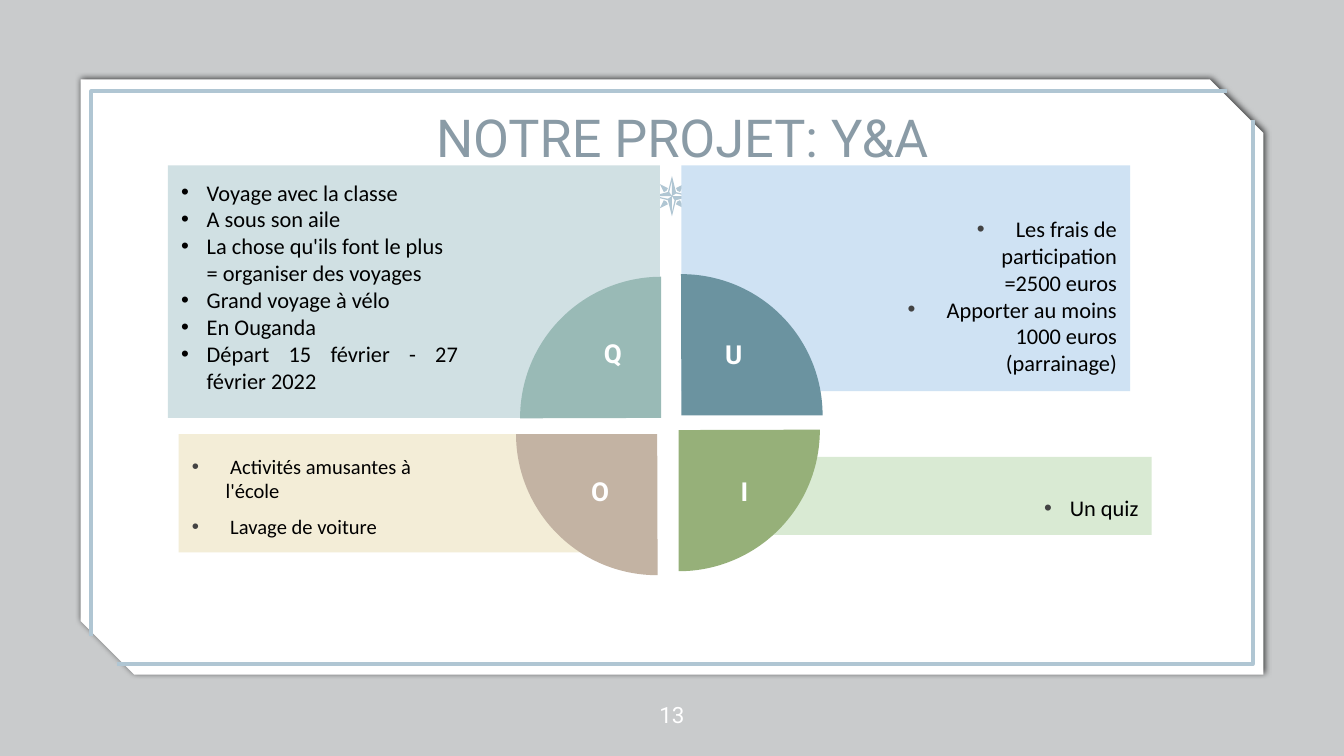
"""Build the project slide on a grid of 100 columns by 56.25 rows."""
from lxml import etree
from pptx import Presentation
from pptx import util as u
from pptx.dml.color import RGBColor
from pptx.enum import shapes, text
from pptx.oxml import ns

COLS, ROWS = 100, 56.25
CELL = u.Inches(0.1)
HUE = {
    "ink": "000000", "white": "FFFFFF", "veil": "040E11", "line": "B0C6D3",
    "title": "8A9BA6", "dot": "434343",
    "mist": "D0E0E3", "sky": "CFE2F3", "sand": "F3EDD7", "mint": "D9EAD3",
    "teal": "99BAB6", "blue": "6B93A0", "green": "96B079", "taupe": "C3B3A3",
}
KIND = shapes.MSO_SHAPE
SIDE = text.PP_ALIGN
EDGE = text.MSO_ANCHOR


def rgb(name):
    """Return the named colour."""
    return RGBColor.from_string(HUE[name])


def grid(*vals):
    """Turn grid cells into slide lengths."""
    return [u.Emu(round(v * CELL)) for v in vals]


def node(up, tag, **atts):
    """Add an XML child in the drawing namespace."""
    kid = etree.SubElement(up, ns.qn("a:" + tag))
    for key, val in atts.items():
        kid.set(key, str(val))
    return kid


def paint(item, hue):
    """Give a shape a flat fill and no line or shadow."""
    item.shadow.inherit = False
    item.fill.solid()
    item.fill.fore_color.rgb = rgb(hue)
    item.line.fill.background()
    return item


def shape(page, kind, box, hue, adj=(), turn=0):
    """Add a flat preset shape."""
    item = paint(page.shapes.add_shape(kind, *grid(*box)), hue)
    for i, val in enumerate(adj):
        item.adjustments[i] = val
    item.rotation = turn
    return item


def path(page, loops, close):
    """Add an outline made of one or more point loops."""
    loops = [[grid(*p) for p in loop] for loop in loops]
    pen = page.shapes.build_freeform(*loops[0][0])
    for i, (start, *rest) in enumerate(loops):
        if i:
            pen.move_to(*start)
        pen.add_line_segments(rest, close=close)
    return pen.convert_to_shape()


def frame(item, edge, pads, wrap=True):
    """Set anchor, wrap and insets (left, top, right, bottom)."""
    body = item.text_frame
    body.word_wrap = wrap
    body.vertical_anchor = edge
    (body.margin_left, body.margin_top,
     body.margin_right, body.margin_bottom) = grid(*pads)
    return body


def write(para, words, size, hue, font, side, bold=False):
    """Add one run to a paragraph."""
    para.alignment = side
    run = para.add_run()
    run.text = words
    run.font.size, run.font.name, run.font.bold = u.Pt(size), font, bold
    run.font.color.rgb = rgb(hue)


def label(page, box, words, size, hue, edge, pads, bold=False, wrap=True):
    """Add a centred line of text."""
    item = page.shapes.add_textbox(*grid(*box))
    body = frame(item, edge, pads, wrap)
    write(body.paragraphs[0], words, size, hue, "Roboto", SIDE.CENTER, bold)


def bullet(para, hue, hang):
    """Give a paragraph a hanging bullet."""
    props = para._p.get_or_add_pPr()
    step = grid(hang)[0]
    props.set("marL", str(step))
    props.set("indent", str(-step))
    node(node(props, "buClr"), "srgbClr", val=HUE[hue])
    node(props, "buFont", typeface="Arial")
    node(props, "buChar", char="•")


def panel(page, box, hue, lines, edge, pads, dot, hang, side, size=12, gap=0):
    """Add a filled panel; each line is (words, alignment, bulleted)."""
    body = frame(shape(page, KIND.RECTANGLE, box, hue), edge, pads)
    for i, line in enumerate(lines):
        words, own, mark = line if isinstance(line, tuple) else (line, side, True)
        para = body.add_paragraph() if i else body.paragraphs[0]
        if mark:
            bullet(para, dot, hang)
        para.space_before = u.Pt(gap if i else 0)
        write(para, words, size, "ink", "Calibri", own)


def back(page):
    """Draw the veil, the paper card and its border."""
    veil = shape(page, KIND.RECTANGLE, (0, 0, COLS, ROWS), "veil")
    node(veil.fill._xPr.find(".//" + ns.qn("a:srgbClr")), "alpha", val=21000)
    card = shape(page, KIND.SNIP_2_DIAG_RECTANGLE, (6, 5.9, 88, 44.3),
                 "white", (0, 0.09))
    glow = node(card._element.spPr.find(ns.qn("a:effectLst")), "outerShdw",
                blurRad=u.Pt(3.4), dist=u.Pt(0.8), dir=0,
                algn="ctr", rotWithShape=0)
    node(node(glow, "srgbClr", val=HUE["ink"]), "alpha", val=68000)
    for loop in ([(6.8, 47.3), (6.8, 6.8), (91.3, 6.8)],
                 [(93.2, 8.9), (93.2, 49.4), (8.7, 49.4)]):
        rim = path(page, [loop], False)
        rim.shadow.inherit = False
        rim.fill.background()
        rim.line.color.rgb = rgb("line")
        rim.line.width = u.Pt(2.25)


def star(page, x, y):
    """Draw a compass rose around a centre."""
    def spot(pts, h=1, v=1):
        return [(x + h * a, y + v * b) for a, b in pts]

    ray = [(-0.9, -0.9), (-0.6, -0.3), (-0.4, -0.4), (-0.3, -0.6)]
    for h in (-1, 1):
        for v in (-1, 1):
            paint(path(page, [spot(ray, h, v)], True), "line")
    rose = [
        [(0, -1.2), (0, 0), (-0.2, -0.3)],
        [(0.3, -0.2), (1.2, 0), (0, 0), (0.2, 0.3), (0, 1.2), (0, 0),
         (-0.3, 0.2), (-1.2, 0), (0, 0)],
        [(0, -1.5), (-0.3, -0.3), (-1.5, 0), (-0.3, 0.3),
         (0, 1.5), (0.3, 0.3), (1.5, 0), (0.3, -0.3)],
    ]
    paint(path(page, [spot(loop) for loop in rose], True), "line")


def wheel(page):
    """Draw the four quarter pies and their letters."""
    for i, (x, y, hue) in enumerate([(38.7, 20.6, "teal"), (40.2, 20.4, "blue"),
                                     (40, 21.5, "green"), (38.4, 21.8, "taupe")]):
        shape(page, KIND.PIE, (x, y, 21, 21), hue, (107.89, 162), 90 * i)
    for words, box in [("Q", (43.7, 24.6, 3.8, 4.3)), ("U", (52.5, 24.7, 4.2, 3.5)),
                       ("I", (54.6, 34.9, 1.6, 3.9)), ("O", (43.1, 34.9, 3.1, 3.5))]:
        label(page, box, words, 14, "white", EDGE.TOP, (0, 0.5, 0, 0.5), True, False)


def main():
    """Build and save the slide."""
    deck = Presentation()
    deck.slide_width, deck.slide_height = grid(COLS, ROWS)
    page = deck.slides.add_slide(deck.slide_layouts[6])
    back(page)
    star(page, 50, 14.6)
    label(page, (11.7, 8.9, 78.1, 6), "NOTRE PROJET: Y&A", 28, "title",
          EDGE.BOTTOM, (0, 0, 0, 2.4))
    label(page, (47, 50.2, 6, 6), "13", 12, "white", EDGE.MIDDLE, (0, 0, 0, 0))
    left, right = (1, 1, 15, 1), (15, 1, 1, 1)
    panel(page, (12.5, 12.3, 36.6, 18.8), "mist",
          ["Voyage avec la classe", "A sous son aile",
           "La chose qu'ils font le plus = organiser des voyages",
           "Grand voyage à vélo", "En Ouganda",
           ("Départ 15 février - 27 février 2022", SIDE.JUSTIFY, True)],
          EDGE.TOP, left, "ink", 1.9, SIDE.LEFT)
    panel(page, (50.7, 12.3, 33.4, 16.8), "sky",
          ["Les frais de participation", ("=2500 euros", SIDE.RIGHT, False),
           "Apporter au moins 1000 euros", ("(parrainage)", SIDE.RIGHT, False)],
          EDGE.TOP, (15, 3.7, 1, 1), "dot", 2.9, SIDE.RIGHT)
    panel(page, (13.3, 32.3, 34.9, 8.8), "sand",
          [" Activités amusantes à l'école", " Lavage de voiture"],
          EDGE.BOTTOM, left, "dot", 2.5, SIDE.LEFT, 11, 6)
    panel(page, (51.4, 34, 34.3, 5.8), "mint", ["Un quiz"],
          EDGE.BOTTOM, right, "dot", 1.9, SIDE.RIGHT)
    wheel(page)
    deck.save("out.pptx")


if __name__ == "__main__":
    main()
